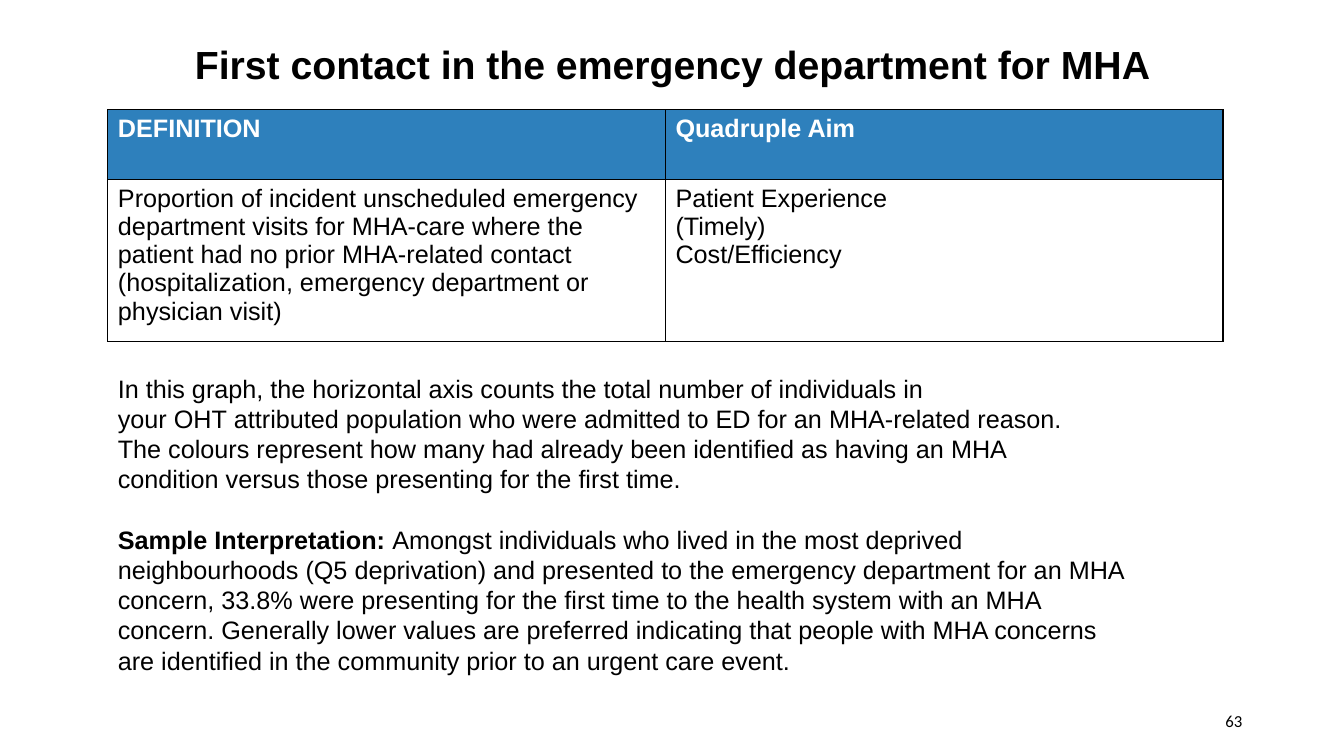
from lxml import etree
from pptx import Presentation
from pptx.dml.color import RGBColor
from pptx.enum.text import MSO_ANCHOR, PP_ALIGN
from pptx.oxml.ns import qn
from pptx.util import Inches, Pt

LEFT, CENTER, RIGHT = PP_ALIGN.LEFT, PP_ALIGN.CENTER, PP_ALIGN.RIGHT
TOP, MIDDLE = MSO_ANCHOR.TOP, MSO_ANCHOR.MIDDLE
COLORS = {"text": "000000", "header_text": "FFFFFF", "header_fill": "2E80BC", "border": "000000"}
NO_BREAK = chr(160)

TITLE = "First contact in the emergency department for MHA"
TABLE_ROWS = [
    ["DEFINITION", "Quadruple Aim"],
    [
        "Proportion of incident unscheduled emergency department visits for MHA-care where "
        "the patient had no prior MHA-related contact (hospitalization, emergency department "
        "or physician visit)",
        "Patient Experience\n(Timely)\nCost/Efficiency",
    ],
]
ROW_HEIGHTS = [0.69, 1.61]
COLUMN_WIDTH = 5.53
GRAPH_NOTE = (
    "In this graph, the horizontal axis counts the total number of individuals in "
    f"your{NO_BREAK}OHT{NO_BREAK}attributed population who were admitted to ED for an "
    f"MHA-related reason. The{NO_BREAK}colours{NO_BREAK}represent how many had already been "
    f"identified as having an MHA condition{NO_BREAK}versus those presenting for the first "
    f"time.{NO_BREAK}"
)
SAMPLE_LABEL = "Sample Interpretation: "
SAMPLE_NOTE = (
    "Amongst individuals who lived in the most deprived neighbourhoods (Q5 deprivation) and "
    "presented to the emergency department for an MHA concern, 33.8% were presenting for the "
    "first time to the health system with an MHA concern. Generally lower values are preferred "
    "indicating that people with MHA concerns are identified in the community prior to an "
    f"urgent care event.{NO_BREAK}"
)


def color(name):
    return RGBColor.from_string(COLORS[name])


def format_font(font, size, name="Arial", bold=False, color_name="text"):
    font.size = Pt(size)
    font.name = name
    font.bold = bold
    font.color.rgb = color(color_name)


def add_text(slide, box, paragraphs, size, name="Arial", align=LEFT, anchor=TOP,
             line_spacing=1.0, space_before=0):
    """Add a text box; each paragraph is a list of (text, bold) runs."""
    shape = slide.shapes.add_textbox(*[Inches(length) for length in box])
    text_frame = shape.text_frame
    text_frame.word_wrap = True
    text_frame.vertical_anchor = anchor
    for index, runs in enumerate(paragraphs):
        paragraph = text_frame.add_paragraph() if index else text_frame.paragraphs[0]
        paragraph.alignment = align
        paragraph.line_spacing = line_spacing
        if index:
            paragraph.space_before = Pt(space_before)
        for text, bold in runs:
            run = paragraph.add_run()
            run.text = text
            format_font(run.font, size, name, bold)


def set_borders(cell):
    properties = cell._tc.get_or_add_tcPr()
    for position, side in enumerate(("lnL", "lnR", "lnT", "lnB")):
        line = etree.Element(qn(f"a:{side}"), w=str(Pt(1)))
        fill = etree.SubElement(line, qn("a:solidFill"))
        etree.SubElement(fill, qn("a:srgbClr"), val=COLORS["border"])
        properties.insert(position, line)


def add_definition_table(slide, left, top):
    columns = len(TABLE_ROWS[0])
    table = slide.shapes.add_table(
        len(TABLE_ROWS), columns, Inches(left), Inches(top),
        Inches(COLUMN_WIDTH * columns), Inches(sum(ROW_HEIGHTS)),
    ).table
    for column in table.columns:
        column.width = Inches(COLUMN_WIDTH)
    for row_index, texts in enumerate(TABLE_ROWS):
        table.rows[row_index].height = Inches(ROW_HEIGHTS[row_index])
        is_header = row_index == 0
        for column_index, text in enumerate(texts):
            cell = table.cell(row_index, column_index)
            cell.text_frame.text = text
            for paragraph in cell.text_frame.paragraphs:
                for run in paragraph.runs:
                    format_font(run.font, 18, bold=is_header,
                                color_name="header_text" if is_header else "text")
            if is_header:
                cell.fill.solid()
                cell.fill.fore_color.rgb = color("header_fill")
            else:
                cell.fill.background()
            set_borders(cell)


def main():
    presentation = Presentation()
    presentation.slide_width = Inches(13.33)
    presentation.slide_height = Inches(7.5)
    slide = presentation.slides.add_slide(presentation.slide_layouts[6])

    add_text(slide, (9.42, 6.95, 3, 0.4), [[("63", False)]], 12, name="Calibri",
             align=RIGHT, anchor=MIDDLE)
    add_text(slide, (0.77, 0.24, 11.8, 0.84), [[(TITLE, True)]], 28,
             align=CENTER, anchor=MIDDLE, line_spacing=0.9)
    add_definition_table(slide, 1.07, 1.09)
    add_text(slide, (1.07, 3.65, 10.32, 3.13),
             [[(GRAPH_NOTE, False)], [(SAMPLE_LABEL, True), (SAMPLE_NOTE, False)]],
             18, space_before=21.6)

    presentation.save("out.pptx")


if __name__ == "__main__":
    main()
